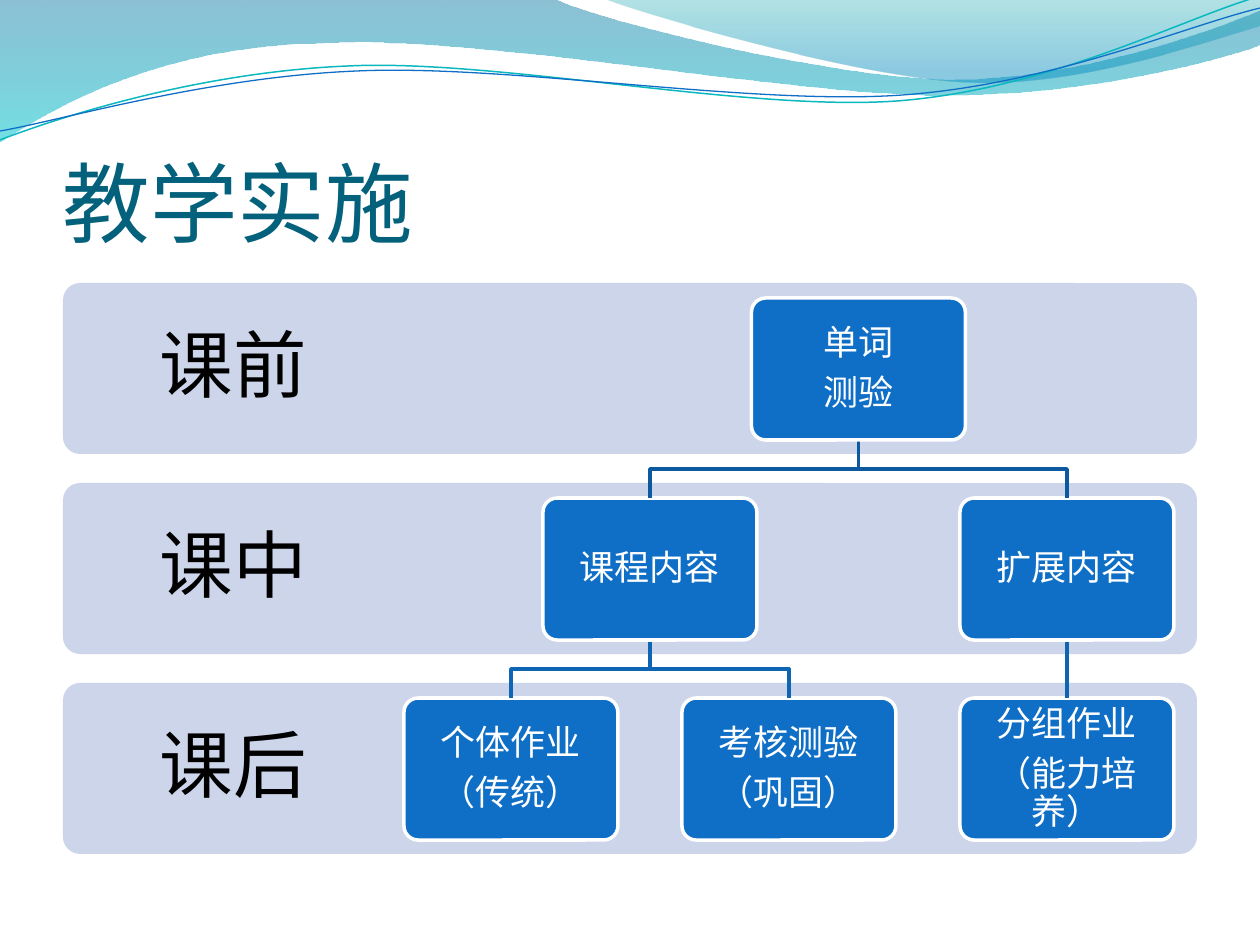
from dataclasses import dataclass
from math import cos, radians, sin

from lxml.etree import SubElement
from pptx import Presentation
from pptx.dml.color import RGBColor as RGB
from pptx.enum.shapes import MSO_SHAPE as Form
from pptx.enum.text import MSO_ANCHOR as Anchor, PP_ALIGN as Align
from pptx.oxml.ns import qn
from pptx.util import Pt

SCALE = 914400 / 126  # EMU in one px


@dataclass(frozen=True)
class Theme:
    title: str = "04617B"
    band: str = "CCD5EA"
    node: str = "0F6FC6"
    dark: str = "000000"
    light: str = "FFFFFF"
    links: tuple = ("0C599F", "0E65B4")
    head: str = "Calibri"
    body: str = "Vollkorn"
    big: int = 50
    mid: int = 42
    small: int = 20


T = Theme()

# Rows of the chart, and the slots its nodes stand on
LEFT, TOP, WIDE, HIGH, PITCH = 63, 283, 1134, 171, 200
SLOT, FIRST, NODE_W, NODE_H, DROP = 139, 511, 214, 142, 15
ROWS = ("课前", "课中", "课后")

# Node: lines of text, then children; a leaf ends with its slot
TREE = (("单词", "测验"), [
    (("课程内容",), [
        (("个体作业", "（传统）"), 0),
        (("考核测验", "（巩固）"), 2)]),
    (("扩展内容",), [
        (("分组作业", "（能力培养）"), 4)])])

# Waves: a pair is a straight step, six numbers are a cubic curve
FILLS = (
    ([(0, 0), (554, -1), (600, 21, 837, 79, 955, 79),
      (1075, 79, 1207, 33, 1260, 11), (1261, 45),
      (1235, 55, 1096, 96, 940, 95), (784, 95, 481, 35, 324, 43),
      (163, 45, 58, 105, -1, 142), (0, 0)],
     ((0, "0074A1", 45), (1, "00C6CF", 55))),
    ([(604, -1), (641, 14, 859, 78, 969, 82),
      (1079, 87, 1211, 40, 1260, 26), (1260, 0), (604, -1)],
     ((0, "00A1A9", 30), (0.8, "008BBF", 45))),
)
TILT, MID = -2.7, (629, 73)  # turn of the thin lines, and its centre
LINES = (
    ([(0, 140), (60, 117, 199, 72, 349, 66), (498, 59, 747, 112, 898, 101),
      (1050, 89, 1182, 19, 1257, -3)], "0AB8BF", 0.85),
    ([(0, 131), (59, 121, 207, 77, 357, 71), (508, 64, 752, 106, 903, 95),
      (1053, 84, 1185, 26, 1260, 8)], "0F6FC6", 0.75),
)


def px(n):
    return round(n * SCALE)


def rgb(code):
    return RGB.from_string(code)


def turn(dot, angle):
    """Turn a point clockwise about the centre of the thin lines."""
    a = radians(angle)
    x, y = dot[0] - MID[0], dot[1] - MID[1]
    return (MID[0] + x * cos(a) - y * sin(a),
            MID[1] + x * sin(a) + y * cos(a))


def outline(slide, steps, close, tilt=0):
    dots = [step[i:i + 2] for step in steps for i in range(0, len(step), 2)]
    dots = [tuple(map(px, turn(dot, -tilt))) for dot in dots]
    pen = slide.shapes.build_freeform(*dots[0])
    pen.add_line_segments(dots[1:], close=close)
    shape = pen.convert_to_shape()
    shape.rotation = tilt
    shape.shadow.inherit = False
    # Gather the three points of each curve into one cubic step
    legs = iter(list(shape.element.spPr.iter(qn("a:lnTo"))))
    for step in steps[1:]:
        leg = next(legs)
        if len(step) == 6:
            leg.addprevious(curve := leg.makeelement(qn("a:cubicBezTo")))
            for part in (leg, next(legs), next(legs)):
                curve.append(part[0])
                part.getparent().remove(part)
    return shape


def add_wave(slide, steps, stops):
    shape = outline(slide, steps, True)
    shape.line.fill.background()
    shape.fill.gradient()
    shape.fill.gradient_angle = 270
    for stop, (place, code, _) in zip(shape.fill.gradient_stops, stops):
        stop.position = place
        stop.color.rgb = rgb(code)
    tints = shape.element.spPr.iter(qn("a:srgbClr"))
    for tint, (_, _, alpha) in zip(list(tints), stops):
        SubElement(tint, qn("a:alpha"), val=str(alpha * 1000))


def add_line(slide, steps, code, width, tilt=0):
    shape = outline(slide, steps, False, tilt)
    shape.fill.background()
    shape.line.color.rgb = rgb(code)
    shape.line.width = Pt(width)


def write(shape, lines, size, code, font, inset, anchor=Anchor.MIDDLE):
    """Fill a shape with centred lines, or a title at the foot."""
    frame = shape.text_frame
    frame.word_wrap = True
    frame.vertical_anchor = anchor
    frame.margin_left, frame.margin_top, frame.margin_right, \
        frame.margin_bottom = map(px, inset)
    for i, line in enumerate(lines):
        para = frame.add_paragraph() if i else frame.paragraphs[0]
        if anchor == Anchor.MIDDLE:
            para.alignment = Align.CENTER
            para.line_spacing = 0.9
            para.space_after = Pt(round(size * 0.35))
        run = para.add_run()
        run.text = line
        run.font.size = Pt(size)
        run.font.name = font
        run.font.color.rgb = rgb(code)
        SubElement(run.font._element, qn("a:ea"), typeface=font)


def add_text(slide, box, *rest):
    write(slide.shapes.add_textbox(*map(px, box)), *rest)


def add_card(slide, box, code):
    card = slide.shapes.add_shape(Form.ROUNDED_RECTANGLE, *map(px, box))
    card.adjustments[0] = 0.1
    card.shadow.inherit = False
    card.fill.solid()
    card.fill.fore_color.rgb = rgb(code)
    card.line.fill.background()
    return card


def add_row(slide, row, name):
    top = TOP + row * PITCH
    add_card(slide, (LEFT, top, WIDE, HIGH), T.band)
    add_text(slide, (LEFT, top, 340, HIGH), [name], T.mid, T.dark, T.body,
             [42] * 4)


def add_link(slide, level, slot, kid):
    """Join a parent's slot to a child's, with a bend if they differ."""
    x, end = FIRST + slot * SLOT, FIRST + kid * SLOT
    top = TOP + level * PITCH + DROP + NODE_H
    foot = TOP + (level + 1) * PITCH + DROP
    mid = (top + foot) // 2
    bend = [(x, mid), (end, mid)] if x != end else []
    add_line(slide, [(x, top), *bend, (end, foot)], T.links[level], 2)


def add_node(slide, node, level=0):
    """Draw a node and its branch; a parent is centred on its children."""
    lines, kids = node
    leaf = not isinstance(kids, list)
    below = [] if leaf else [add_node(slide, kid, level + 1) for kid in kids]
    slot = kids if leaf else sum(below) / len(below)
    for kid in below:
        add_link(slide, level, slot, kid)
    card = add_card(slide, (FIRST + slot * SLOT - NODE_W / 2,
                            TOP + level * PITCH + DROP, NODE_W, NODE_H), T.node)
    card.line.color.rgb = rgb(T.light)
    card.line.width = Pt(2)
    write(card, lines, T.small, T.light, T.body, [14] * 4)
    return slot


def main():
    deck = Presentation()
    deck.slide_width, deck.slide_height = px(1260), px(945)
    slide = deck.slides.add_slide(deck.slide_layouts[6])

    # Waves along the top
    for wave in FILLS:
        add_wave(slide, *wave)
    for line in LINES:
        add_line(slide, *line, TILT)

    # Title
    add_text(slide, (LEFT, 97, WIDE, 157), ["教学实施"], T.big, T.title,
             T.head, (0, 6, 0, 0), Anchor.BOTTOM)

    # Rows and the tree upon them
    for row, name in enumerate(ROWS):
        add_row(slide, row, name)
    add_node(slide, TREE)
    deck.save("out.pptx")


if __name__ == "__main__":
    main()
